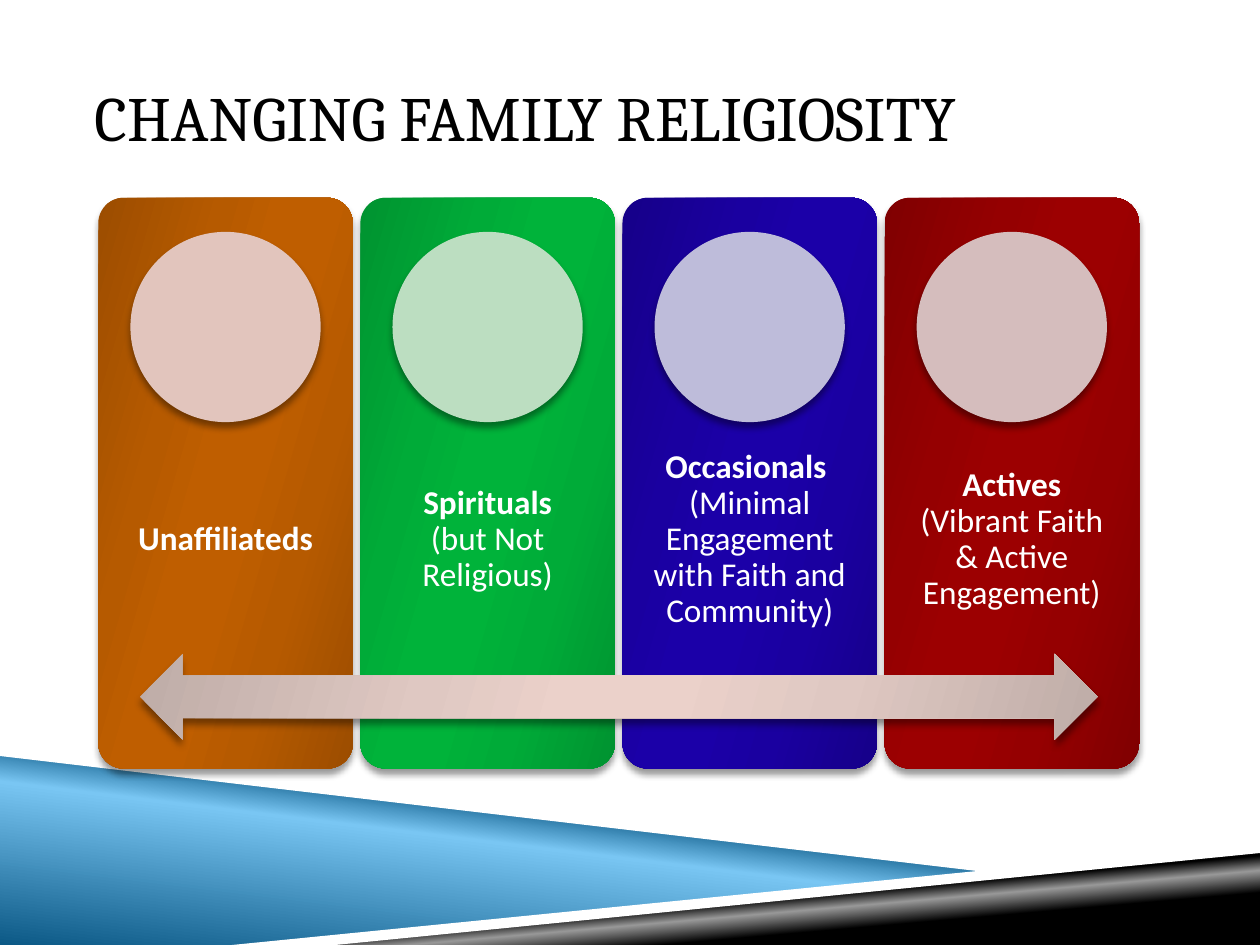
from pptx import Presentation
from pptx.dml.color import RGBColor
from pptx.enum.shapes import MSO_SHAPE
from pptx.enum.text import MSO_ANCHOR, PP_ALIGN
from pptx.oxml import parse_xml
from pptx.oxml.ns import nsdecls, qn
from pptx.util import Inches, Pt

COLORS = {
    "white": "FFFFFF", "black": "000000", "grey": "999999",
    "deep_blue": "0C5986", "sky": "79C6F3",
}
# Edge, shoulder and centre of each sheen
SHEENS = {
    "orange": ("9C4D00", "B65A00", "BF5E00"),
    "green": ("009330", "00AB38", "00B33A"),
    "indigo": ("160089", "1A00A0", "1B00A8"),
    "red": ("800001", "950001", "9C0001"),
    "arrow": ("BEACA7", "DFC8C2", "EBD1CA"),
}
GROUPS = [
    ("orange", "E2C5BD", "Unaffiliateds", []),
    ("green", "BCDEC1", "Spirituals", ["(but Not Religious)"]),
    ("indigo", "BEBCDA", "Occasionals ",
     ["(Minimal Engagement with Faith and Community)"]),
    ("red", "D5BDBD", "Actives", ["(Vibrant Faith", "& Active Engagement)"]),
]
CARD_LEFT, CARD_STEP, CARD_WIDTH, CIRCLE = 0.78, 2.08, 2.02, 1.51


def fill_solid(sp, color):
    sp.fill.solid()
    sp.fill.fore_color.rgb = RGBColor.from_string(color)


def fill_gradient(sp, stops, angle):
    """Fill with any number of (percent, colour) stops."""
    gs = "".join(
        f'<a:gs pos="{pos * 1000}"><a:srgbClr val="{color}"/></a:gs>'
        for pos, color in stops)
    grad = parse_xml(
        f'<a:gradFill {nsdecls("a")} rotWithShape="1"><a:gsLst>{gs}</a:gsLst>'
        f'<a:lin ang="{angle * 60000}" scaled="0"/></a:gradFill>')
    sp.fill.background()
    props = sp._element.spPr
    props.replace(props.find(qn("a:noFill")), grad)


def fill_sheen(sp, name):
    edge, shoulder, centre = SHEENS[name]
    fill_gradient(sp, [(0, edge), (30, shoulder), (45, centre),
                       (55, centre), (73, shoulder), (100, edge)], 16)


def add_shadow(sp):
    sp.shadow.inherit = False
    sp._element.spPr.find(qn("a:effectLst")).append(parse_xml(
        f'<a:outerShdw {nsdecls("a")} blurRad="{Pt(4)}" dist="{Pt(3.3)}" '
        f'dir="5400000" rotWithShape="0"><a:srgbClr val="{COLORS["black"]}">'
        '<a:alpha val="40000"/></a:srgbClr></a:outerShdw>'))


def add_raised(slide, kind, left, top, width, height):
    """Add a preset shape with no outline and a soft shadow."""
    sp = slide.shapes.add_shape(
        kind, Inches(left), Inches(top), Inches(width), Inches(height))
    sp.line.fill.background()
    add_shadow(sp)
    return sp


def add_band(slide, points):
    start, *rest = [(Inches(x), Inches(y)) for x, y in points]
    builder = slide.shapes.build_freeform(*start)
    builder.add_line_segments(rest, close=True)
    sp = builder.convert_to_shape()
    sp.line.fill.background()
    sp.shadow.inherit = False
    return sp


def add_text_box(slide, left, top, width, height, inset_x, inset_y):
    box = slide.shapes.add_textbox(
        Inches(left), Inches(top), Inches(width), Inches(height))
    tf = box.text_frame
    frame_format = {
        "word_wrap": True, "vertical_anchor": MSO_ANCHOR.MIDDLE,
        "margin_left": Inches(inset_x), "margin_right": Inches(inset_x),
        "margin_top": Inches(inset_y), "margin_bottom": Inches(inset_y),
    }
    for name, value in frame_format.items():
        setattr(tf, name, value)
    return tf.paragraphs[0]


def add_run(p, text, color, **font_format):
    r = p.add_run()
    r.text = text
    r.font.color.rgb = RGBColor.from_string(color)
    for name, value in font_format.items():
        setattr(r.font, name, value)


def add_backdrop(slide):
    blue = add_band(slide, [(0, 5.97), (7.92, 6.92), (2, 7.5), (0, 7.5)])
    fill_gradient(blue, [(0, COLORS["deep_blue"]), (52, COLORS["sky"]),
                         (66, COLORS["deep_blue"])], 277)
    black = add_band(slide, [(1.98, 7.5), (10, 6.72), (10, 7.5)])
    fill_gradient(black, [(28, COLORS["black"]), (40, COLORS["grey"]),
                          (48, COLORS["black"])], 265)
    for points in (
        [(0, 5.92), (0, 6), (7.9, 6.93), (8.32, 6.9)],
        [(10, 6.69), (1.84, 7.5), (2.66, 7.5), (10, 6.77)],
    ):
        fill_solid(add_band(slide, points), COLORS["white"])


def add_title(slide, text):
    p = add_text_box(slide, 0.75, 0.3, 8.5, 1.25, 0, 0.05)
    add_run(p, text, COLORS["black"], name="Cambria", size=Pt(36))


def add_card(slide, left, sheen, circle_color, heading, details):
    card = add_raised(slide, MSO_SHAPE.ROUNDED_RECTANGLE,
                      left, 1.57, CARD_WIDTH, 4.53)
    card.adjustments[0] = 0.1
    fill_sheen(card, sheen)

    p = add_text_box(slide, left, 3.38, CARD_WIDTH, 1.81, 0.15, 0.15)
    p.alignment = PP_ALIGN.CENTER
    p.line_spacing = 0.9
    font = {"name": "Calibri", "size": Pt(19)}
    add_run(p, heading, COLORS["white"], bold=True, **font)
    for line in details:
        p.add_line_break()
        add_run(p, line, COLORS["white"], bold=False, **font)

    circle = add_raised(slide, MSO_SHAPE.OVAL,
                        left + (CARD_WIDTH - CIRCLE) / 2, 1.84, CIRCLE, CIRCLE)
    fill_solid(circle, circle_color)


def main():
    prs = Presentation()
    prs.slide_width, prs.slide_height = Inches(10), Inches(7.5)
    slide = prs.slides.add_slide(prs.slide_layouts[6])
    add_backdrop(slide)
    add_title(slide, "CHANGING FAMILY RELIGIOSITY")
    for i, group in enumerate(GROUPS):
        add_card(slide, CARD_LEFT + i * CARD_STEP, *group)
    arrow = add_raised(slide, MSO_SHAPE.LEFT_RIGHT_ARROW, 1.11, 5.19, 7.6, 0.68)
    fill_sheen(arrow, "arrow")
    prs.save("out.pptx")


if __name__ == "__main__":
    main()
